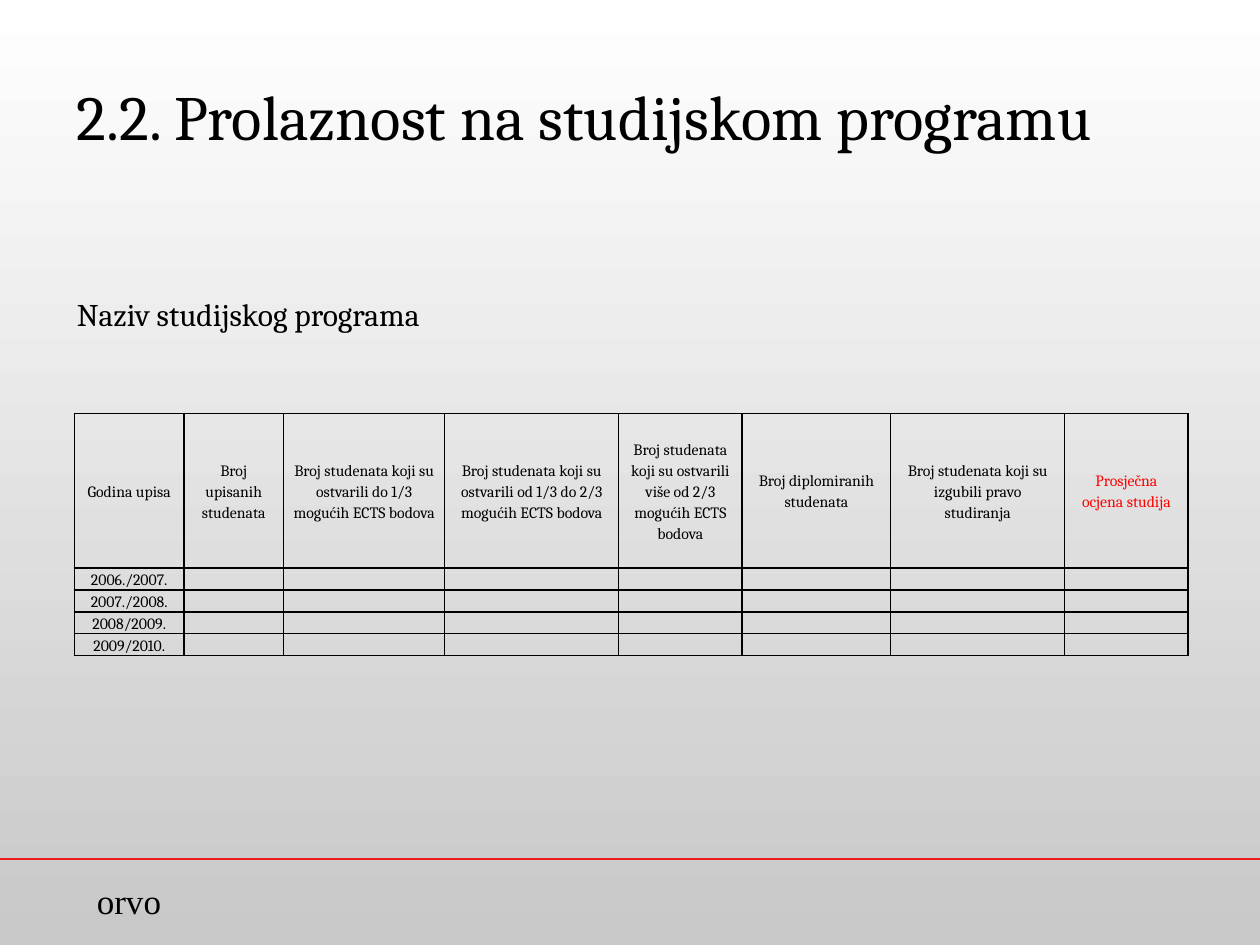
"""Build the slide on pass rates in a study programme."""
from lxml import etree
from pptx import Presentation
from pptx import util as u
from pptx.dml.color import RGBColor
from pptx.enum import shapes, text
from pptx.oxml import ns

TITLE = "2.2. Prolaznost na studijskom programu"
SUBTITLE = "Naziv studijskog programa"
FOOTER = "orvo"
COLUMNS = [
    ("Godina upisa", 0.87),
    ("Broj upisanih studenata", 0.79),
    ("Broj studenata koji su ostvarili do 1/3 mogućih ECTS bodova", 1.28),
    ("Broj studenata koji su ostvarili od 1/3 do 2/3 mogućih ECTS bodova", 1.38),
    ("Broj studenata koji su ostvarili više od 2/3 mogućih ECTS bodova", 0.98),
    ("Broj diplomiranih studenata", 1.18),
    ("Broj studenata koji su izgubili pravo studiranja", 1.38),
    ("Prosječna ocjena studija", 0.98),
]
YEARS = ["2006./2007.", "2007./2008.", "2008/2009.", "2009/2010."]
HEADER_HEIGHT, ROW_HEIGHT = 1.23, 0.17

BLACK = RGBColor(0, 0, 0)
WHITE = RGBColor(255, 255, 255)
GREY = RGBColor(0xC8, 0xC8, 0xC8)
RED = RGBColor(255, 0, 0)
RULE_RED = RGBColor(0xEE, 0x1C, 0x1B)


def style(para, size, color=BLACK, name="Cambria"):
    para.font.size = u.Pt(size)
    para.font.name = name
    para.font.color.rgb = color


def add_background(slide):
    fill = slide.background.fill
    fill.gradient()
    fill.gradient_angle = 270
    for stop, color in zip(fill.gradient_stops, (WHITE, GREY)):
        stop.color.rgb = color
    fill.gradient_stops[0].position = 0
    fill.gradient_stops[1].position = 1


def add_title(slide):
    title = slide.shapes.title
    title.left, title.top = u.Inches(0.51), u.Inches(0.29)
    title.width, title.height = u.Inches(8.82), u.Inches(2.68)
    frame = title.text_frame
    frame.text = f"{TITLE}\n{SUBTITLE}"
    frame.auto_size = text.MSO_AUTO_SIZE.NONE
    frame.vertical_anchor = text.MSO_ANCHOR.MIDDLE
    for para, size, gap in zip(frame.paragraphs, (36, 18), (0, 81)):
        para.alignment = text.PP_ALIGN.LEFT
        para.space_before = u.Pt(gap)
        style(para, size)


def add_footer(slide):
    rule = slide.shapes.add_connector(
        shapes.MSO_CONNECTOR.STRAIGHT,
        u.Inches(0), u.Inches(6.82), u.Inches(10), u.Inches(6.82))
    rule.line.color.rgb = RULE_RED
    rule.line.width = u.Pt(1)
    etree.SubElement(rule._element.spPr, ns.qn("a:effectLst"))
    box = slide.shapes.add_textbox(
        u.Inches(0.67), u.Inches(6.93), u.Inches(0.87), u.Inches(0.43))
    box.text_frame.word_wrap = True
    box.text_frame.text = FOOTER
    style(box.text_frame.paragraphs[0], 20, name="Times New Roman")


def add_borders(cell):
    properties = cell._tc.get_or_add_tcPr()
    for side in ("lnL", "lnR", "lnT", "lnB"):
        line = etree.SubElement(properties, ns.qn(f"a:{side}"), w=str(u.Pt(1)))
        fill = etree.SubElement(line, ns.qn("a:solidFill"))
        etree.SubElement(fill, ns.qn("a:srgbClr"), val=str(BLACK))


def format_cell(cell, words, color):
    add_borders(cell)
    cell.fill.background()
    cell.margin_left = cell.margin_right = u.Inches(0.07)
    cell.margin_top = cell.margin_bottom = 0
    cell.vertical_anchor = text.MSO_ANCHOR.MIDDLE
    cell.text = words
    para = cell.text_frame.paragraphs[0]
    para.alignment = text.PP_ALIGN.CENTER
    para.line_spacing = 1.15
    para.space_after = u.Pt(10)
    style(para, 9, color)
    if not words:
        end = etree.SubElement(para._p, ns.qn("a:endParaRPr"), sz="900")
        etree.SubElement(end, ns.qn("a:latin"), typeface="Cambria")


def add_results_table(slide):
    headings, widths = zip(*COLUMNS)
    rows = [headings] + [(year,) + ("",) * (len(COLUMNS) - 1) for year in YEARS]
    heights = [HEADER_HEIGHT] + [ROW_HEIGHT] * len(YEARS)
    table = slide.shapes.add_table(
        len(rows), len(COLUMNS), u.Inches(0.59), u.Inches(3.28),
        u.Inches(sum(widths)), u.Inches(sum(heights))).table
    table.first_row = table.horz_banding = False
    for column, width in zip(table.columns, widths):
        column.width = u.Inches(width)
    for row, height, entries in zip(table.rows, heights, rows):
        row.height = u.Inches(height)
        for cell, words in zip(row.cells, entries):
            format_cell(cell, words, RED if words == headings[-1] else BLACK)


def main():
    deck = Presentation()
    deck.slide_width, deck.slide_height = u.Inches(10), u.Inches(7.5)
    slide = deck.slides.add_slide(deck.slide_layouts[5])
    add_background(slide)
    add_footer(slide)
    add_title(slide)
    add_results_table(slide)
    deck.save("out.pptx")


if __name__ == "__main__":
    main()
